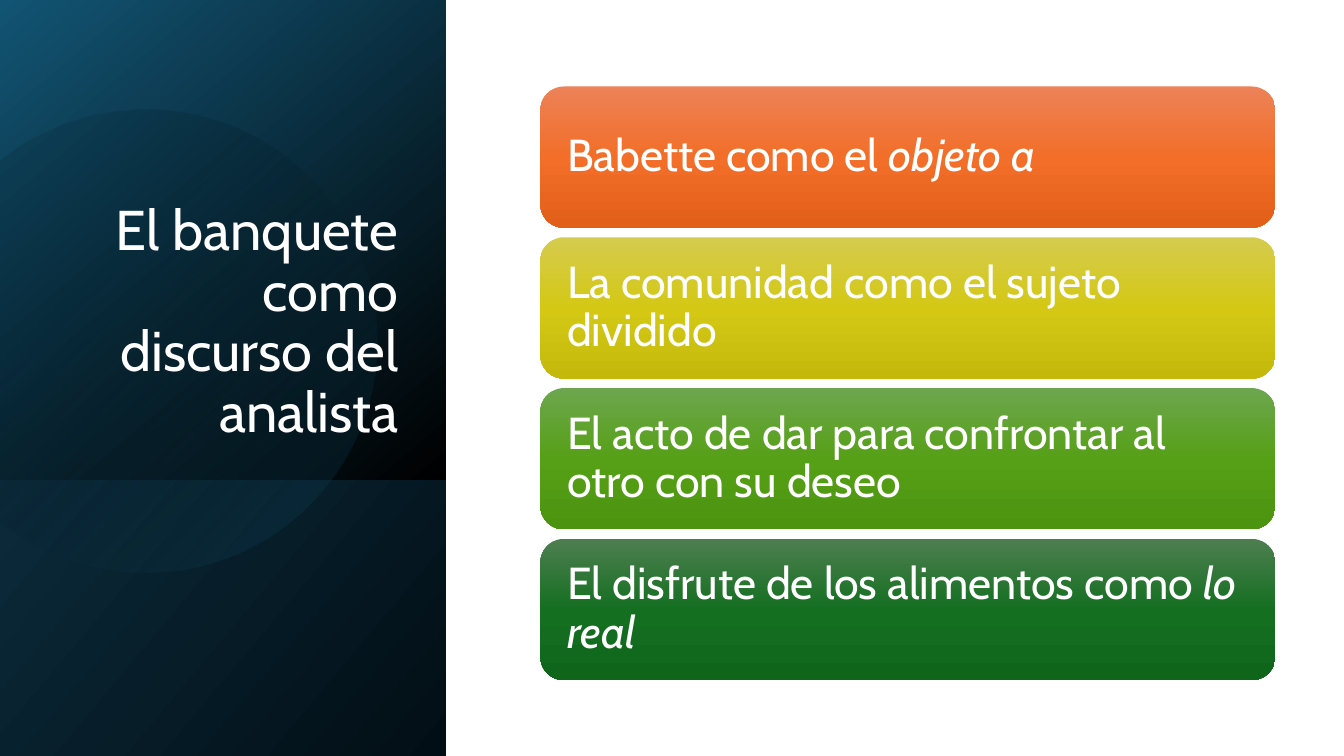
import math

from lxml import etree
from pptx import Presentation
from pptx import util as u
from pptx.dml.color import RGBColor
from pptx.enum import shapes, text
from pptx.oxml.ns import qn

COLORS = {
    "white": "FFFFFF", "black": "000000", "blue": "125473", "teal": "156082",
    "navy": "0B2B3B", "night": "020E15",
    "orange": ("ED8257", "F26E29", "E25F1A"),
    "yellow": ("D5CB4E", "D4C815", "C4B90B"),
    "lime": ("6DA64E", "56A017", "4C930F"),
    "green": ("4D7E50", "156F21", "0F661B"),
}

CARDS = [
    ("orange", [("Babette como el ", False), ("objeto a", True)]),
    ("yellow", [("La comunidad como el sujeto dividido", False)]),
    ("lime", [("El acto de dar para confrontar al otro con su deseo", False)]),
    ("green", [("El disfrute de los alimentos como ", False), ("lo real", True)]),
]


def add_span(para, words, size=32, color="white", italic=False, font="Cabin"):
    span = para.add_run()
    span.text = words
    span.font.name = font
    span.font.size = u.Pt(size)
    span.font.italic = italic
    span.font.color.rgb = RGBColor.from_string(COLORS[color])


class Slide:
    """Hold the style and the current page, and draw its elements."""

    def __init__(self, deck):
        self.page = deck.slides.add_slide(deck.slide_layouts[5])

    def paint(self, shape, stops, angle):
        shape.shadow.inherit = False
        shape.line.fill.background()
        shape.fill.gradient()
        shape.fill.gradient_angle = 360 - angle
        stop_list = shape._element.spPr.find(qn("a:gradFill")).find(qn("a:gsLst"))
        for stop in list(stop_list):
            stop_list.remove(stop)
        for position, color, opacity in stops:
            stop = etree.SubElement(stop_list, qn("a:gs"), pos=str(position * 1000))
            value = etree.SubElement(stop, qn("a:srgbClr"), val=color)
            if opacity < 100:
                etree.SubElement(value, qn("a:alpha"), val=str(opacity * 1000))

    def panel(self, top, height, start, end, angle):
        box = self.page.shapes.add_shape(
            shapes.MSO_SHAPE.RECTANGLE, 0, u.Cm(top), u.Cm(11.23), u.Cm(height))
        self.paint(box, [(0, COLORS[start], 100), (100, COLORS[end], 100)], angle)

    def disc(self, center_x, center_y, radius):
        reach = math.acos(-center_x / radius)
        steps = 90
        angles = [reach * (2 * step / steps - 1) for step in range(steps + 1)]
        points = [(u.Cm(center_x + radius * math.cos(angle)),
                   u.Cm(center_y + radius * math.sin(angle))) for angle in angles]
        builder = self.page.shapes.build_freeform(*points[0])
        builder.add_line_segments(points[1:], close=True)
        self.paint(builder.convert_to_shape(),
                   [(30, COLORS["black"], 10), (100, COLORS["teal"], 25)], 45)

    def title(self, words, left, top, width, height):
        box = self.page.shapes.title
        self.page.shapes._spTree.append(box._element)
        box.left, box.top, box.width, box.height = map(
            u.Cm, (left, top, width, height))
        frame = box.text_frame
        frame.auto_size = text.MSO_AUTO_SIZE.NONE
        frame.word_wrap = True
        frame.vertical_anchor = text.MSO_ANCHOR.BOTTOM
        para = frame.paragraphs[0]
        para.alignment = text.PP_ALIGN.RIGHT
        para.line_spacing = 0.9
        add_span(para, words, size=40)

    def card(self, top, color, spans):
        box = self.page.shapes.add_shape(
            shapes.MSO_SHAPE.ROUNDED_RECTANGLE,
            u.Cm(13.62), u.Cm(top), u.Cm(18.52), u.Cm(3.56))
        self.paint(box, [(50 * index, shade, 100)
                         for index, shade in enumerate(COLORS[color])], 90)
        frame = box.text_frame
        frame.word_wrap = True
        frame.vertical_anchor = text.MSO_ANCHOR.MIDDLE
        frame.margin_left = frame.margin_right = u.Cm(0.5)
        para = frame.paragraphs[0]
        para.alignment = text.PP_ALIGN.LEFT
        para.line_spacing = 0.9
        for words, italic in spans:
            add_span(para, words, italic=italic)


def main():
    deck = Presentation()
    deck.slide_width, deck.slide_height = u.Cm(33.87), u.Cm(19.05)
    slide = Slide(deck)
    slide.panel(0, 12.1, "blue", "black", 50)
    slide.panel(12.1, 6.95, "navy", "night", 40)
    slide.disc(3.68, 8.59, 5.84)
    slide.title("El banquete como discurso del analista", 1.63, 4.67, 8.66, 6.65)
    for index, (color, spans) in enumerate(CARDS):
        slide.card(2.18 + 3.8 * index, color, spans)
    deck.save("out.pptx")


if __name__ == "__main__":
    main()
